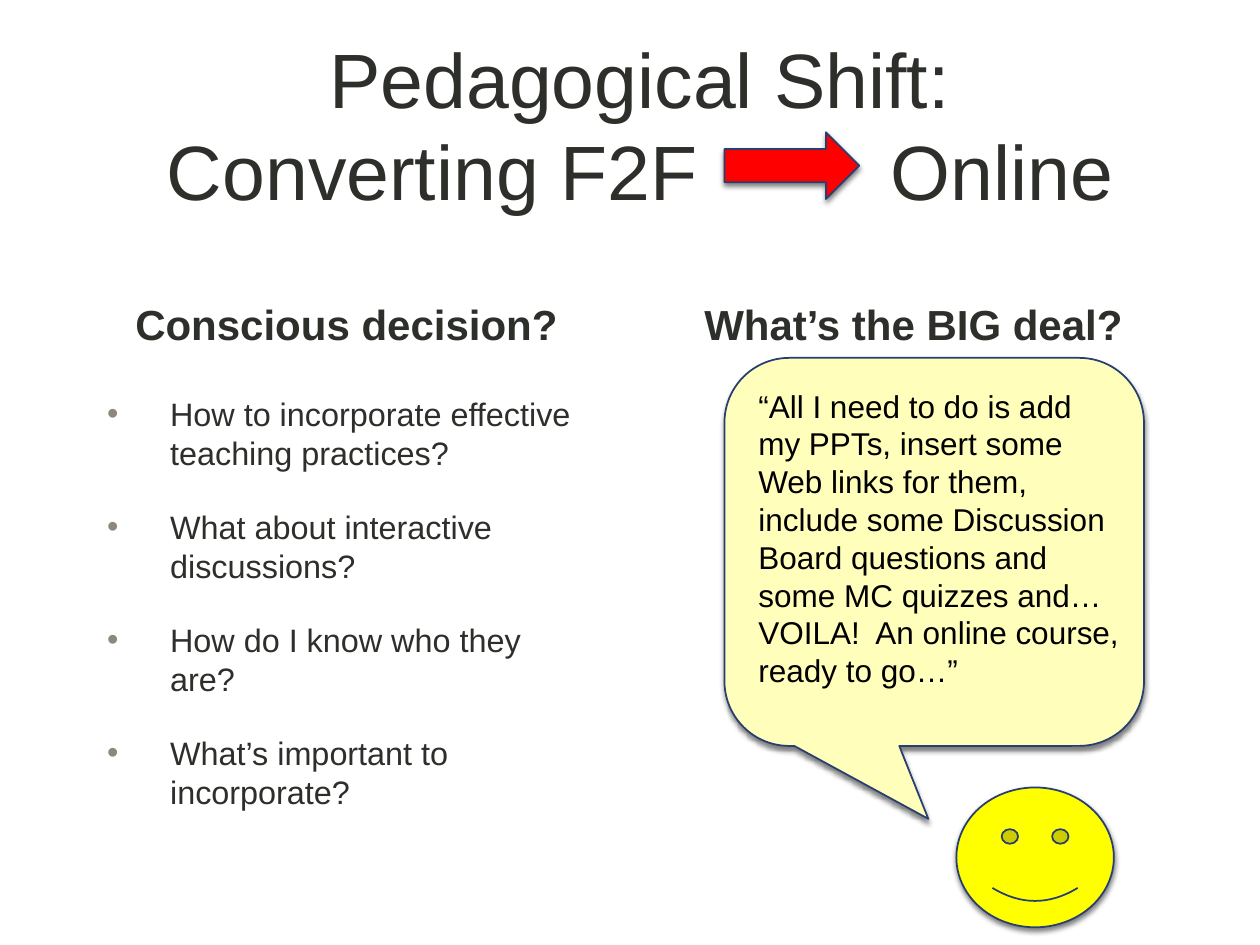
from lxml import etree
from pptx import Presentation
from pptx.dml.color import RGBColor
from pptx.enum.shapes import MSO_SHAPE as SHAPE
from pptx.enum.text import MSO_ANCHOR as ANCHOR, MSO_AUTO_SIZE as AUTO, PP_ALIGN as ALIGN
from pptx.oxml.ns import qn
from pptx.util import Inches, Pt

COLORS = {
    "text": "2D2F2B",
    "black": "000000",
    "bullet": "8E887C",
    "outline": "263F70",
    "arrow": "FF0000",
    "bubble": "FFFEBA",
    "smiley": "FFFF00",
}
FONT = "Arial"
QUESTIONS = [
    "How to incorporate effective teaching practices?",
    "What about interactive discussions?",
    "How do I know who they are?",
    "What’s important to incorporate?",
]
QUOTE = (
    "“All I need to do is add my PPTs, insert some Web links for them, "
    "include some Discussion Board questions and some MC quizzes and…"
    "VOILA!  An online course, ready to go…”"
)


def rgb(name):
    return RGBColor.from_string(COLORS[name])


def add_text(p, text, size=18, color="text", bold=False, align=None):
    """Add one formatted run to a paragraph."""
    if align is not None:
        p.alignment = align
    r = p.add_run()
    r.text = text
    r.font.name = FONT
    r.font.size = Pt(size)
    r.font.bold = bold
    r.font.color.rgb = rgb(color)
    return r


def place(sp, box, anchor=ANCHOR.TOP):
    """Position a text shape and return its text frame."""
    sp.left, sp.top, sp.width, sp.height = map(Inches, box)
    tf = sp.text_frame
    tf.word_wrap = True
    tf.auto_size = AUTO.NONE
    tf.vertical_anchor = anchor
    return tf


def fill_title(sp):
    p = place(sp, (0.83, 0.23, 8.5, 1.5), ANCHOR.MIDDLE).paragraphs[0]
    add_text(p, "Pedagogical Shift:", 44, align=ALIGN.CENTER)
    p.add_line_break()
    add_text(p, "Converting F2F", 44)
    # One widely tracked space leaves room for the arrow
    gap = add_text(p, " ", 44)
    gap.font._element.set("spc", "9780")
    add_text(p, "Online", 44)


def fill_heading(sp, text, left):
    p = place(sp, (left, 2.22, 4, 0.7), ANCHOR.MIDDLE).paragraphs[0]
    p.space_before = Pt(0)
    add_text(p, text, 24, bold=True, align=ALIGN.CENTER)


def add_bullet(p):
    pPr = p._p.get_or_add_pPr()
    pPr.set("marL", str(Inches(0.5)))
    pPr.set("indent", str(Inches(-0.5)))
    clr = etree.SubElement(pPr, qn("a:buClr"))
    etree.SubElement(clr, qn("a:srgbClr"), val=COLORS["bullet"])
    etree.SubElement(pPr, qn("a:buFont"), typeface=FONT)
    etree.SubElement(pPr, qn("a:buChar"), char="•")


def fill_bullets(sp, items):
    tf = place(sp, (0.75, 3.08, 4, 3.33))
    for i, item in enumerate(items):
        p = tf.add_paragraph() if i else tf.paragraphs[0]
        add_bullet(p)
        p.space_before = Pt(20 if i else 0)
        add_text(p, item, 18.5)


def add_shadow(sp):
    sp.shadow.inherit = False
    effects = sp._element.spPr.find(qn("a:effectLst"))
    shadow = etree.SubElement(
        effects, qn("a:outerShdw"), blurRad=str(Pt(3)), dist=str(Pt(2)),
        dir=str(90 * 60000), rotWithShape="0")
    clr = etree.SubElement(shadow, qn("a:srgbClr"), val=COLORS["black"])
    etree.SubElement(clr, qn("a:alpha"), val="50000")


def add_figure(shapes, kind, box, fill, adjustments=()):
    sp = shapes.add_shape(kind, *map(Inches, box))
    for i, value in enumerate(adjustments):
        sp.adjustments[i] = value
    sp.fill.solid()
    sp.fill.fore_color.rgb = rgb(fill)
    sp.line.color.rgb = rgb("outline")
    sp.line.width = Pt(1)
    add_shadow(sp)


def add_quote(shapes, box):
    sp = shapes.add_textbox(*map(Inches, box))
    add_text(place(sp, box).paragraphs[0], QUOTE, 18, "black")


def main():
    prs = Presentation()
    prs.slide_width, prs.slide_height = Inches(10), Inches(7.5)
    slide = prs.slides.add_slide(prs.slide_layouts[4])
    title, left_head, bullets, right_head, unused = slide.placeholders
    unused._element.getparent().remove(unused._element)

    # Title and the two columns
    fill_title(title)
    fill_heading(left_head, "Conscious decision?", 0.75)
    fill_bullets(bullets, QUESTIONS)
    fill_heading(right_head, "What’s the BIG deal?", 5.25)

    # Arrow in the title
    add_figure(slide.shapes, SHAPE.RIGHT_ARROW, (5.75, 1.05, 1.07, 0.53), "arrow")

    # Speaking smiley
    group = slide.shapes.add_group_shape().shapes
    add_figure(group, SHAPE.ROUNDED_RECTANGULAR_CALLOUT, (5.75, 2.84, 3.33, 3.08),
               "bubble", (-0.014, 0.688, 0.167))
    add_quote(group, (5.92, 3.02, 3.08, 2.83))
    add_figure(group, SHAPE.SMILEY_FACE, (7.59, 6.25, 1.25, 1.11), "smiley")

    prs.save("out.pptx")


if __name__ == "__main__":
    main()
